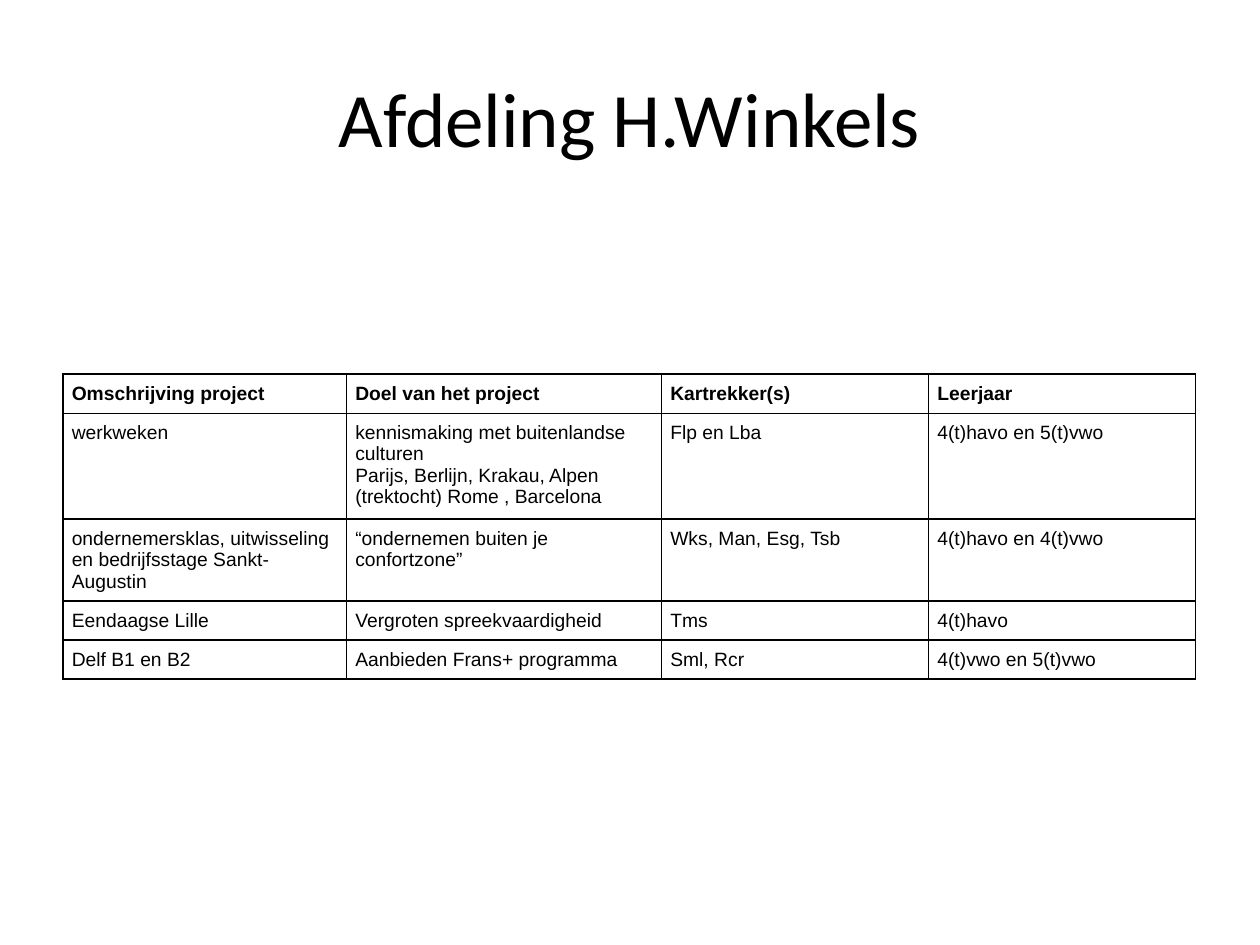
from lxml import etree
from pptx import Presentation
from pptx.dml.color import RGBColor
from pptx.enum.text import MSO_ANCHOR, PP_ALIGN
from pptx.oxml.ns import qn
from pptx.util import Inches, Pt

MIDDLE = MSO_ANCHOR.MIDDLE
TOP = MSO_ANCHOR.TOP
CENTER = PP_ALIGN.CENTER
BLACK = "000000"

TITLE = "Afdeling H.Winkels"
COL_WIDTHS = [2.25, 2.5, 2.12, 2.12]
ROW_HEIGHTS = [0.31, 0.84, 0.49, 0.31, 0.31]
PROJECTS = [
    ["Omschrijving project", "Doel van het project", "Kartrekker(s)", "Leerjaar"],
    ["werkweken",
     "kennismaking met buitenlandse culturen\n"
     "Parijs, Berlijn, Krakau, Alpen (trektocht) Rome , Barcelona",
     "Flp en Lba", "4(t)havo en 5(t)vwo"],
    ["ondernemersklas, uitwisseling en bedrijfsstage Sankt-Augustin",
     "“ondernemen buiten je confortzone”",
     "Wks, Man, Esg, Tsb", "4(t)havo en 4(t)vwo"],
    ["Eendaagse Lille", "Vergroten spreekvaardigheid", "Tms", "4(t)havo"],
    ["Delf B1 en B2", "Aanbieden Frans+ programma", "Sml, Rcr", "4(t)vwo en 5(t)vwo"],
]


def rgb(color):
    return RGBColor.from_string(color)


def set_attrs(obj, values):
    for name, value in values.items():
        setattr(obj, name, value)


def format_text(tf, color=BLACK, **font):
    for p in tf.paragraphs:
        for r in p.runs:
            set_attrs(r.font, font)
            r.font.color.rgb = rgb(color)


def add_title(s, text):
    sp = s.shapes.title
    set_attrs(sp, {"left": Inches(0.5), "top": Inches(0.3),
                   "width": Inches(9), "height": Inches(1.25)})
    tf = sp.text_frame
    tf.text = text
    tf.vertical_anchor = MIDDLE
    tf.paragraphs[0].alignment = CENTER
    format_text(tf, name="Calibri", size=Pt(44))


def set_borders(cell, color, width):
    tc_pr = cell._tc.get_or_add_tcPr()
    for i, side in enumerate(("lnL", "lnR", "lnT", "lnB")):
        ln = etree.Element(qn(f"a:{side}"), w=str(Pt(width)))
        fill = etree.SubElement(ln, qn("a:solidFill"))
        etree.SubElement(fill, qn("a:srgbClr"), val=color)
        tc_pr.insert(i, ln)


def fill_cell(cell, text, bold):
    cell.text = text
    margins = ("margin_left", "margin_top", "margin_right", "margin_bottom")
    set_attrs(cell, dict.fromkeys(margins, Inches(0.07)))
    cell.vertical_anchor = TOP
    cell.fill.background()
    format_text(cell.text_frame, name="Arial", size=Pt(11), bold=bold)
    set_borders(cell, BLACK, 1)


def add_project_table(s, rows):
    frame = s.shapes.add_table(
        len(rows), len(COL_WIDTHS), Inches(0.5), Inches(2.97),
        Inches(sum(COL_WIDTHS)), Inches(sum(ROW_HEIGHTS)))
    table = frame.table
    set_attrs(table, {"first_row": False, "horz_banding": False})
    for column, width in zip(table.columns, COL_WIDTHS):
        column.width = Inches(width)
    for i, (row, height, texts) in enumerate(zip(table.rows, ROW_HEIGHTS, rows)):
        row.height = Inches(height)
        for cell, text in zip(row.cells, texts):
            fill_cell(cell, text, bold=i == 0)


def main():
    prs = Presentation()
    set_attrs(prs, {"slide_width": Inches(10), "slide_height": Inches(7.5)})
    s = prs.slides.add_slide(prs.slide_layouts[5])
    add_title(s, TITLE)
    add_project_table(s, PROJECTS)
    prs.save("out.pptx")


if __name__ == "__main__":
    main()
